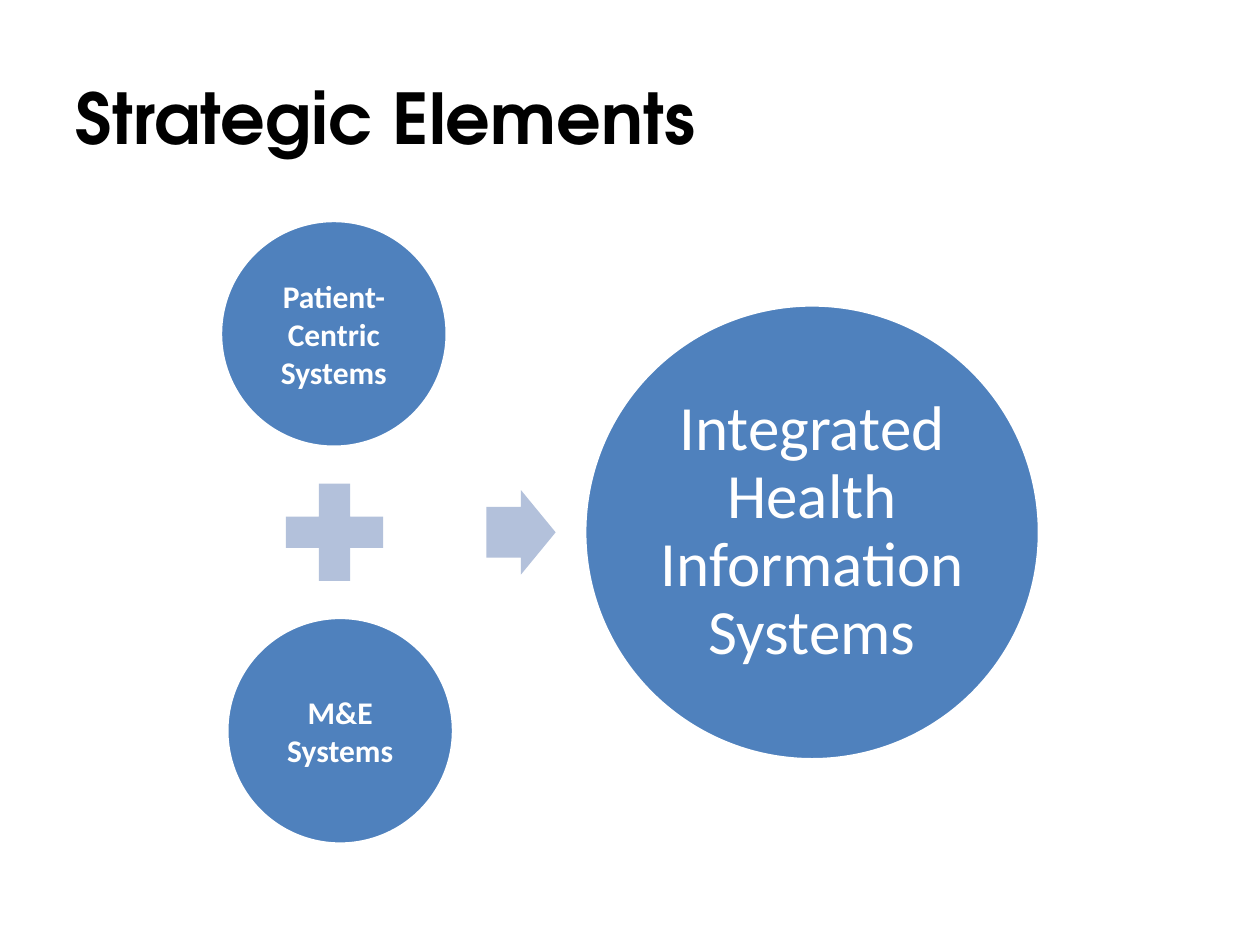
from dataclasses import dataclass

from pptx import Presentation
from pptx.dml.color import RGBColor
from pptx.enum.shapes import MSO_SHAPE
from pptx.enum.text import MSO_ANCHOR, PP_ALIGN
from pptx.util import Inches, Pt


@dataclass(frozen=True)
class Theme:
    """Colours, fonts and type sizes of the slide."""
    ink: RGBColor = RGBColor.from_string("000000")
    paper: RGBColor = RGBColor.from_string("FFFFFF")
    blue: RGBColor = RGBColor.from_string("4F81BD")
    pale: RGBColor = RGBColor.from_string("B3C1DB")
    head: str = "TeX Gyre Adventor"
    body: str = "Calibri"
    title: int = 40
    large: int = 36
    small: int = 18


def apply(target, values):
    """Set each named value as an attribute of the target."""
    for name, value in values.items():
        setattr(target, name, value)


class Deck:
    """Draws the elements of the current slide in one style."""

    def __init__(self, theme, width, height):
        """Start a presentation with one blank slide."""
        self.theme = theme
        self.show = Presentation()
        apply(self.show, {"slide_width": Inches(width), "slide_height": Inches(height)})
        self.slide = self.show.slides.add_slide(self.show.slide_layouts[6])

    def label(self, shape, text, font, color, inset, **layout):
        """Fill a shape's frame with one styled paragraph."""
        frame = shape.text_frame
        apply(frame, {"word_wrap": True, "vertical_anchor": MSO_ANCHOR.MIDDLE})
        apply(frame, {"margin_left": Inches(inset), "margin_right": Inches(inset),
                      "margin_top": Inches(inset), "margin_bottom": Inches(inset)})
        line = frame.paragraphs[0]
        apply(line, layout)
        run = line.add_run()
        run.text = text
        apply(run.font, font)
        run.font.color.rgb = color

    def title(self, text, *box):
        """Add the slide title."""
        look = self.theme
        shape = self.slide.shapes.add_textbox(*map(Inches, box))
        font = {"name": look.head, "size": Pt(look.title), "bold": True}
        self.label(shape, text, font, look.ink, 0.1, alignment=PP_ALIGN.LEFT)

    def shape(self, kind, fill, *box):
        """Add a plain filled shape without an outline."""
        shape = self.slide.shapes.add_shape(kind, *map(Inches, box))
        shape.shadow.inherit = False
        shape.fill.solid()
        shape.fill.fore_color.rgb = fill
        shape.line.fill.background()
        return shape

    def circle(self, text, left, top, side, size, bold, inset, spacing=1.0):
        """Add a labelled circle with a white rim."""
        look = self.theme
        shape = self.shape(MSO_SHAPE.OVAL, look.blue, left, top, side, side)
        shape.line.color.rgb = look.paper
        shape.line.width = Pt(2)
        font = {"name": look.body, "size": Pt(size), "bold": bold}
        self.label(shape, text, font, look.paper, inset,
                   alignment=PP_ALIGN.CENTER, line_spacing=spacing)

    def sign(self, kind, *box, ratios=()):
        """Add a pale operator sign with the given adjustments."""
        shape = self.shape(kind, self.theme.pale, *box)
        for spot, ratio in enumerate(ratios):
            shape.adjustments[spot] = ratio


def main():
    """Build and save the slide."""
    theme = Theme()
    deck = Deck(theme, 10, 7.5)
    deck.title("Strategic Elements", 0.5, 0.3, 9, 1.25)
    parts = (("Patient-Centric Systems", 1.75, 1.75), ("M&E Systems", 1.8, 4.9))
    for text, left, top in parts:
        deck.circle(text, left, top, 1.8, theme.small, True, 0.03)
    deck.sign(MSO_SHAPE.MATH_PLUS, 2.13, 3.7, 1.05, 1.05)
    deck.sign(MSO_SHAPE.RIGHT_ARROW, 3.86, 3.89, 0.55, 0.67, ratios=(0.6, 0.5))
    deck.circle("Integrated Health Information Systems", 4.64, 2.42, 3.61,
                theme.large, False, 0.05, 0.9)
    deck.show.save("out.pptx")


if __name__ == "__main__":
    main()
